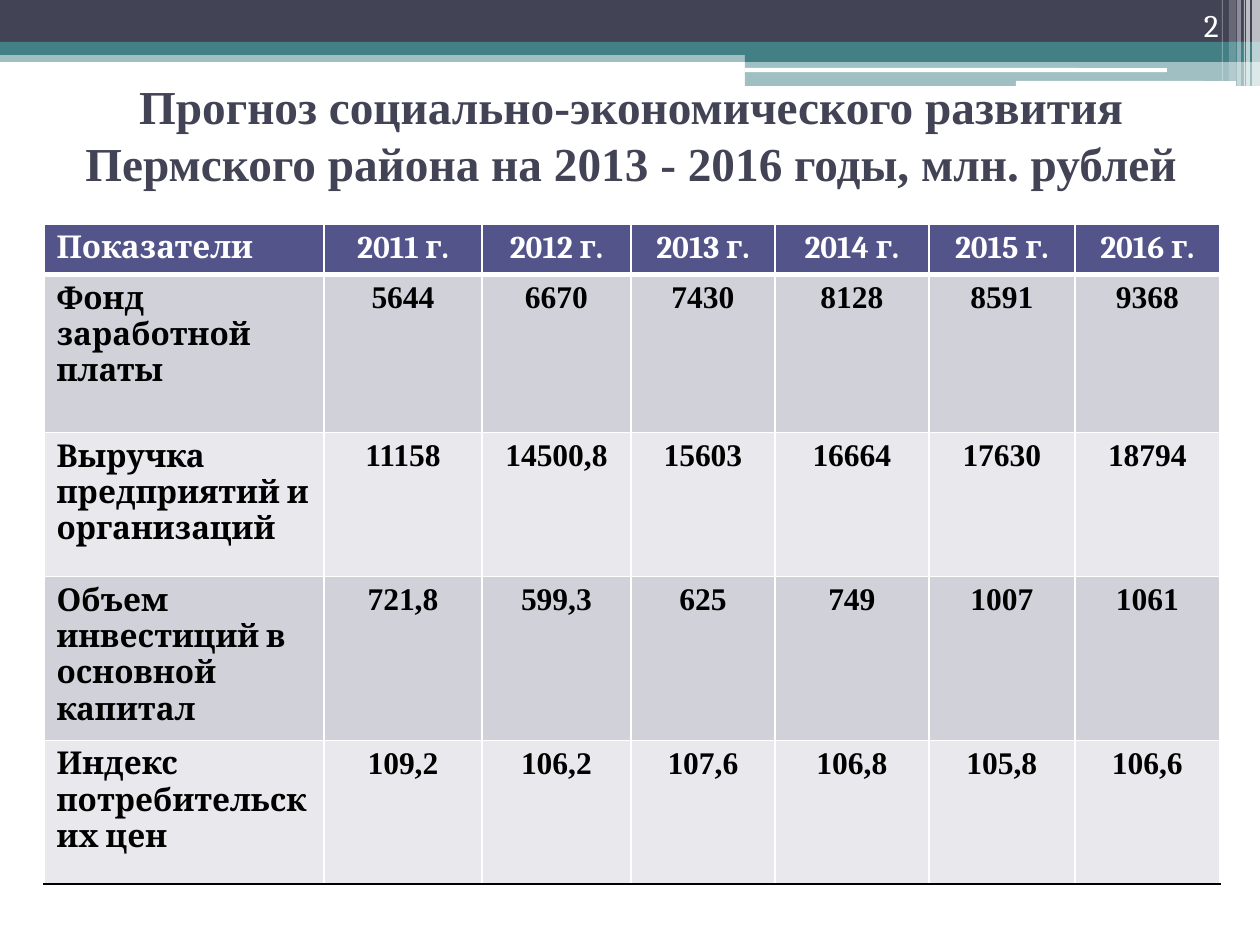
"""Build a slide with a table of the district's economic forecast."""
from typing import NamedTuple

from lxml import etree
from pptx import Presentation
from pptx.dml.color import RGBColor
from pptx.enum.shapes import MSO_SHAPE
from pptx.enum.text import MSO_ANCHOR, PP_ALIGN
from pptx.oxml.ns import qn
from pptx.util import Emu, Pt

RECT, ROUND = MSO_SHAPE.RECTANGLE, MSO_SHAPE.ROUNDED_RECTANGLE
LEFT, MID, RIGHT = PP_ALIGN.LEFT, PP_ALIGN.CENTER, PP_ALIGN.RIGHT
CENTER, BOTTOM = MSO_ANCHOR.MIDDLE, MSO_ANCHOR.BOTTOM
WHITE = RGBColor(0xFF, 0xFF, 0xFF)
BLACK = RGBColor(0, 0, 0)
SLATE = RGBColor(0x42, 0x44, 0x56)
TEAL = RGBColor(0x43, 0x80, 0x86)
VIOLET = RGBColor(0x53, 0x54, 0x8A)
DARK = RGBColor(0xD1, 0xD1, 0xDA)
LIGHT = RGBColor(0xE9, 0xE9, 0xED)
SERIF, ROMAN = "Cambria", "Times New Roman"


class Bar(NamedTuple):
    x: int
    y: int
    w: int
    h: int
    color: RGBColor
    alpha: int = 100
    kind: int = RECT


class Label(NamedTuple):
    x: int
    y: int
    w: int
    h: int
    text: str
    size: int
    font: str
    color: RGBColor
    bold: bool
    align: int
    anchor: int


BARS = [
    Bar(0, 50, 1260, 12, TEAL, 50),
    Bar(0, 0, 1260, 42, SLATE),
    Bar(0, 42, 1260, 13, TEAL),
    Bar(745, 49, 515, 13, TEAL),
    Bar(745, 61, 515, 25, TEAL, 50),
    Bar(745, 68, 422, 4, WHITE, kind=ROUND),
    Bar(1016, 81, 220, 5, WHITE, kind=ROUND),
    Bar(1252, 0, 8, 86, WHITE, 65),
    Bar(1246, 0, 4, 86, WHITE, 65),
    Bar(1244, 0, 1, 86, WHITE, 60),
    Bar(1237, 0, 4, 86, WHITE, 40),
    Bar(1229, 0, 7, 81, WHITE, 20),
    Bar(1222, 0, 1, 81, WHITE, 30),
]
TITLE = Label(
    64, 55, 1134, 158,
    "Прогноз социально-экономического развития "
    "Пермского района на 2013 - 2016 годы, млн. рублей",
    27, ROMAN, SLATE, True, MID, CENTER)
NUMBER = Label(1126, 0, 105, 50, "2", 18, SERIF, WHITE, False, RIGHT, BOTTOM)
WIDTHS = [280, 158, 149, 144, 154, 146, 145]
HEIGHTS = [49, 158, 144, 158, 144]
ROWS = [
    ["Показатели"] + [f"{year} г." for year in range(2011, 2017)],
    ["Фонд заработной платы", "5644", "6670", "7430", "8128", "8591", "9368"],
    ["Выручка предприятий и организаций",
     "11158", "14500,8", "15603", "16664", "17630", "18794"],
    ["Объем инвестиций в основной капитал",
     "721,8", "599,3", "625", "749", "1007", "1061"],
    ["Индекс потребительских цен",
     "109,2", "106,2", "107,6", "106,8", "105,8", "106,6"],
]


def px(n: int) -> Emu:
    return Emu(round(n * 914400 / 126))


def style(para, text: str, size: int, font: str, color: RGBColor,
          bold: bool, align: int) -> None:
    para.text = text
    para.alignment = align
    para.font.size = Pt(size)
    para.font.name = font
    para.font.bold = bold
    para.font.color.rgb = color


def draw_bar(shapes, bar: Bar) -> None:
    shape = shapes.add_shape(bar.kind, *map(px, bar[:4]))
    shape.shadow.inherit = False
    shape.line.fill.background()
    shape.fill.solid()
    shape.fill.fore_color.rgb = bar.color
    if bar.alpha < 100:
        tint = next(shape.fill._xPr.iter(qn("a:srgbClr")))
        etree.SubElement(tint, qn("a:alpha"), val=str(bar.alpha * 1000))


def draw_label(shapes, item: Label) -> None:
    frame = shapes.add_textbox(*map(px, item[:4])).text_frame
    frame.word_wrap = True
    frame.vertical_anchor = item.anchor
    style(frame.paragraphs[0], *item[4:10])


def add_edge(cell, spot: int, side: str, width: int, color: RGBColor) -> None:
    line = etree.Element(qn(f"a:{side}"), w=str(Pt(width)))
    fill = etree.SubElement(line, qn("a:solidFill"))
    etree.SubElement(fill, qn("a:srgbClr"), val=str(color))
    cell._tc.get_or_add_tcPr().insert(spot, line)


def draw_cell(cell, row: int, col: int, text: str) -> None:
    head, last = row == 0, row == len(ROWS) - 1
    cell.fill.solid()
    cell.fill.fore_color.rgb = VIOLET if head else DARK if row % 2 else LIGHT
    style(cell.text_frame.paragraphs[0], text, 18,
          SERIF if head or col == 0 else ROMAN,
          WHITE if head else BLACK, True, MID if col else LEFT)
    edges = [("lnL", 1, WHITE), ("lnR", 1, WHITE),
             ("lnT", 3 if row == 1 else 1, WHITE),
             ("lnB", 3 if head else 1, BLACK if last else WHITE)]
    for spot, edge in enumerate(edges):
        add_edge(cell, spot, *edge)


def draw_table(shapes) -> None:
    table = shapes.add_table(
        len(ROWS), len(WIDTHS), px(44), px(224),
        px(sum(WIDTHS)), px(sum(HEIGHTS))).table
    for column, width in zip(table.columns, WIDTHS):
        column.width = px(width)
    for row, (texts, height) in enumerate(zip(ROWS, HEIGHTS)):
        table.rows[row].height = px(height)
        for col, text in enumerate(texts):
            draw_cell(table.cell(row, col), row, col, text)


def main() -> None:
    deck = Presentation()
    deck.slide_width, deck.slide_height = px(1260), px(945)
    shapes = deck.slides.add_slide(deck.slide_layouts[6]).shapes
    for bar in BARS:
        draw_bar(shapes, bar)
    draw_label(shapes, TITLE)
    draw_table(shapes)
    draw_label(shapes, NUMBER)
    deck.save("out.pptx")


if __name__ == "__main__":
    main()
